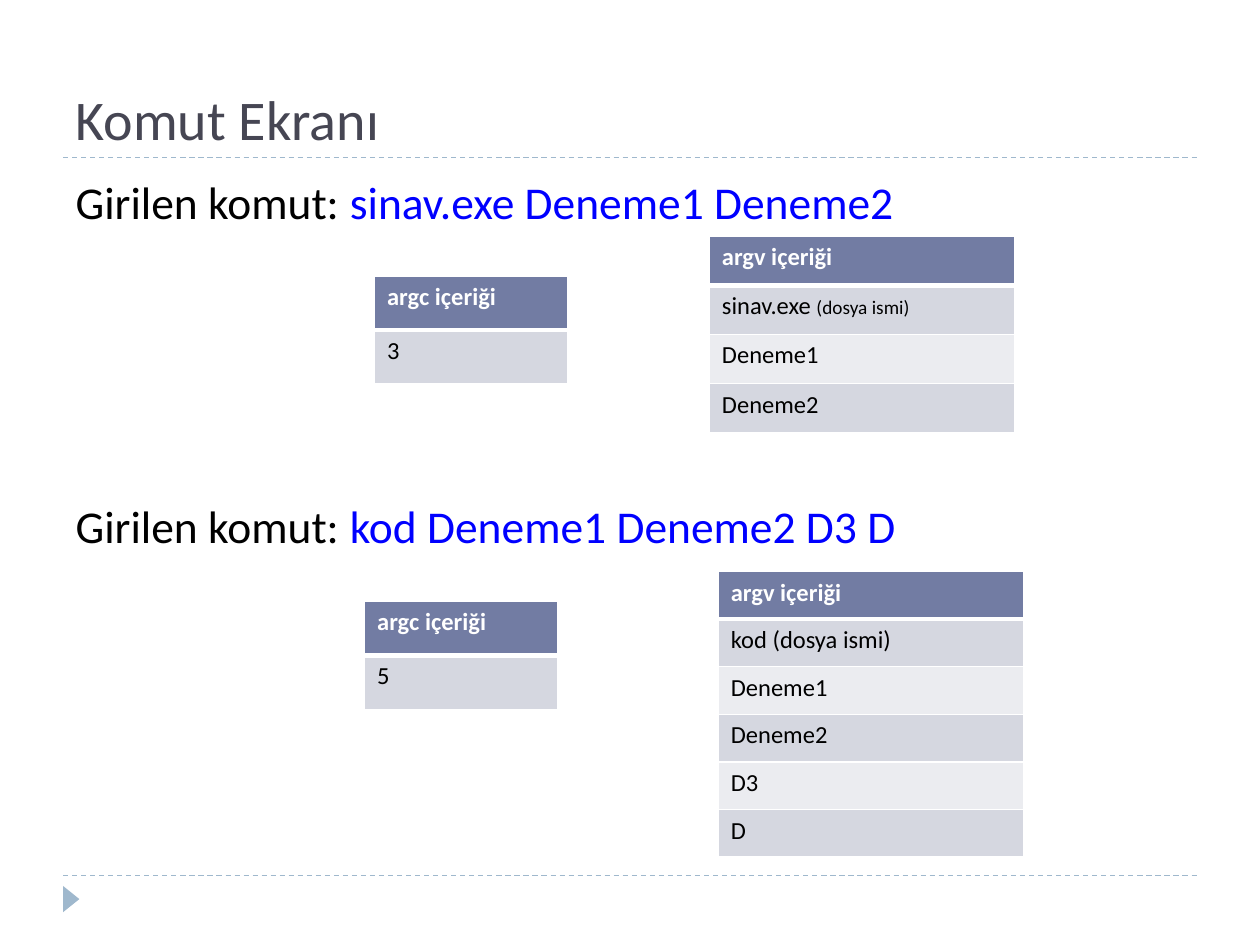
from lxml import etree
from pptx import Presentation
from pptx.dml.color import RGBColor
from pptx.enum import dml, shapes, text
from pptx.oxml.ns import qn
from pptx.util import Cm, Pt

FONT = "Calibri"
BLACK, WHITE, BLUE = "000000", "FFFFFF", "0000FF"
HEAD, BANDS = "727CA3", ("D5D7E0", "EBECF0")
TITLE, ACCENT = "464653", "9FB8CD"


def rgb(value):
    return RGBColor.from_string(value)


def add_run(p, content, size=14, color=BLACK, bold=False):
    r = p.add_run()
    r.text = content
    r.font.name, r.font.size, r.font.bold = FONT, Pt(size), bold
    r.font.color.rgb = rgb(color)


def place(sp, left, top, width, height):
    sp.left, sp.top, sp.width, sp.height = map(Cm, (left, top, width, height))


def add_rule(slide, left, top, width):
    line = slide.shapes.add_connector(
        shapes.MSO_CONNECTOR.STRAIGHT, Cm(left), Cm(top), Cm(left + width), Cm(top))
    line.line.color.rgb = rgb(ACCENT)
    line.line.width = Pt(0.75)
    line.line.dash_style = dml.MSO_LINE.DASH
    etree.SubElement(line._element.spPr, qn("a:effectLst"))


def add_frame(slide, left, width):
    """Dashed rules and the footer marker."""
    for top in (17.65, 3.18):
        add_rule(slide, left, top, width)
    sp = slide.shapes.add_shape(
        shapes.MSO_SHAPE.ISOSCELES_TRIANGLE, Cm(left - 0.1), Cm(17.96), Cm(0.53), Cm(0.33))
    sp.rotation = 90
    sp.shadow.inherit = False
    sp.fill.solid()
    sp.fill.fore_color.rgb = rgb(ACCENT)
    sp.line.fill.background()


def fill_title(sp, content, box):
    place(sp, *box)
    tf = sp.text_frame
    tf.auto_size = text.MSO_AUTO_SIZE.NONE
    tf.vertical_anchor = text.MSO_ANCHOR.BOTTOM
    p = tf.paragraphs[0]
    p.alignment = text.PP_ALIGN.LEFT
    add_run(p, content, size=32, color=TITLE)


def fill_commands(sp, commands, box):
    """One unbulleted paragraph per command, with room for tables between."""
    place(sp, *box)
    tf = sp.text_frame
    tf.auto_size = text.MSO_AUTO_SIZE.NONE
    for i, command in enumerate(commands):
        p = tf.add_paragraph() if i else tf.paragraphs[0]
        p.space_before = Pt(154 if i else 6)
        pPr = p._p.get_or_add_pPr()
        pPr.set("marL", str(Cm(0.76)))
        pPr.set("indent", str(Cm(-0.76)))
        etree.SubElement(pPr, qn("a:buNone"))
        add_run(p, "Girilen komut: ", size=26)
        add_run(p, command, size=26, color=BLUE)


def set_borders(cell, widths):
    tcPr = cell._tc.get_or_add_tcPr()
    for side, width in widths.items():
        ln = etree.SubElement(tcPr, qn(f"a:ln{side}"), w=str(Pt(width)))
        solid = etree.SubElement(ln, qn("a:solidFill"))
        etree.SubElement(solid, qn("a:srgbClr"), val=WHITE)


def add_list_table(slide, header, rows, left, top, width, row_height):
    """One-column table; each row is a list of (text, size) runs."""
    count = len(rows) + 1
    table = slide.shapes.add_table(
        count, 1, Cm(left), Cm(top), Cm(width), Cm(row_height * count)).table
    for i, runs in enumerate([[(header, 14)]] + rows):
        table.rows[i].height = Cm(row_height)
        cell = table.cell(i, 0)
        is_head = i == 0
        set_borders(cell, {"L": 1, "R": 1, "T": 3 if i == 1 else 1, "B": 3 if is_head else 1})
        cell.fill.solid()
        cell.fill.fore_color.rgb = rgb(HEAD if is_head else BANDS[(i - 1) % 2])
        for content, size in runs:
            add_run(cell.text_frame.paragraphs[0], content, size=size,
                    color=WHITE if is_head else BLACK, bold=is_head)


def add_arguments(slide, args, argc_at, argv_at, argv_row):
    """The argc and argv tables of one command."""
    add_list_table(slide, "argc içeriği", [[(str(len(args)), 14)]], *argc_at, 3.9, 1.09)
    add_list_table(slide, "argv içeriği", args, *argv_at, 6.15, argv_row)


def main():
    prs = Presentation()
    prs.slide_width, prs.slide_height = Cm(25.4), Cm(19.05)
    slide = prs.slides.add_slide(prs.slide_layouts[1])
    title, body = slide.placeholders

    left, width = 1.27, 22.86
    add_frame(slide, left, width)
    fill_title(title, "Komut Ekranı", (left, 0.43, width, 2.75))
    fill_commands(body, ["sinav.exe Deneme1 Deneme2", "kod Deneme1 Deneme2 D3 D"],
                  (left, 3.38, width, 13.72))

    # First command
    add_arguments(slide, [[("sinav.exe ", 14), ("(dosya ismi)", 11)],
                          [("Deneme1", 14)], [("Deneme2", 14)]],
                  (7.55, 5.56), (14.3, 4.76), 0.99)
    # Second command
    words = ["kod (dosya ismi)", "Deneme1", "Deneme2", "D3", "D"]
    add_arguments(slide, [[(word, 14)] for word in words],
                  (7.35, 12.12), (14.48, 11.52), 0.96)

    prs.save("out.pptx")


if __name__ == "__main__":
    main()
